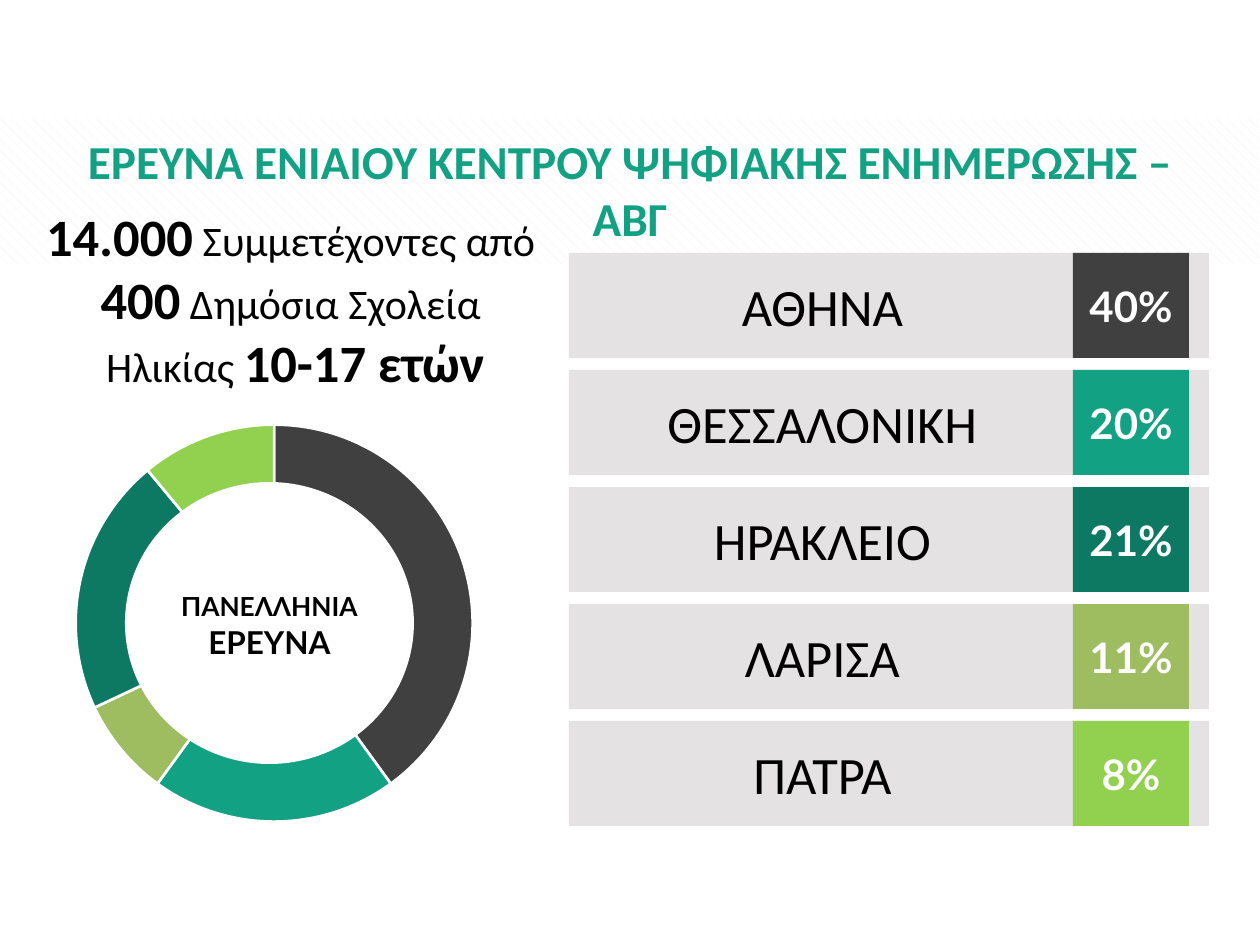
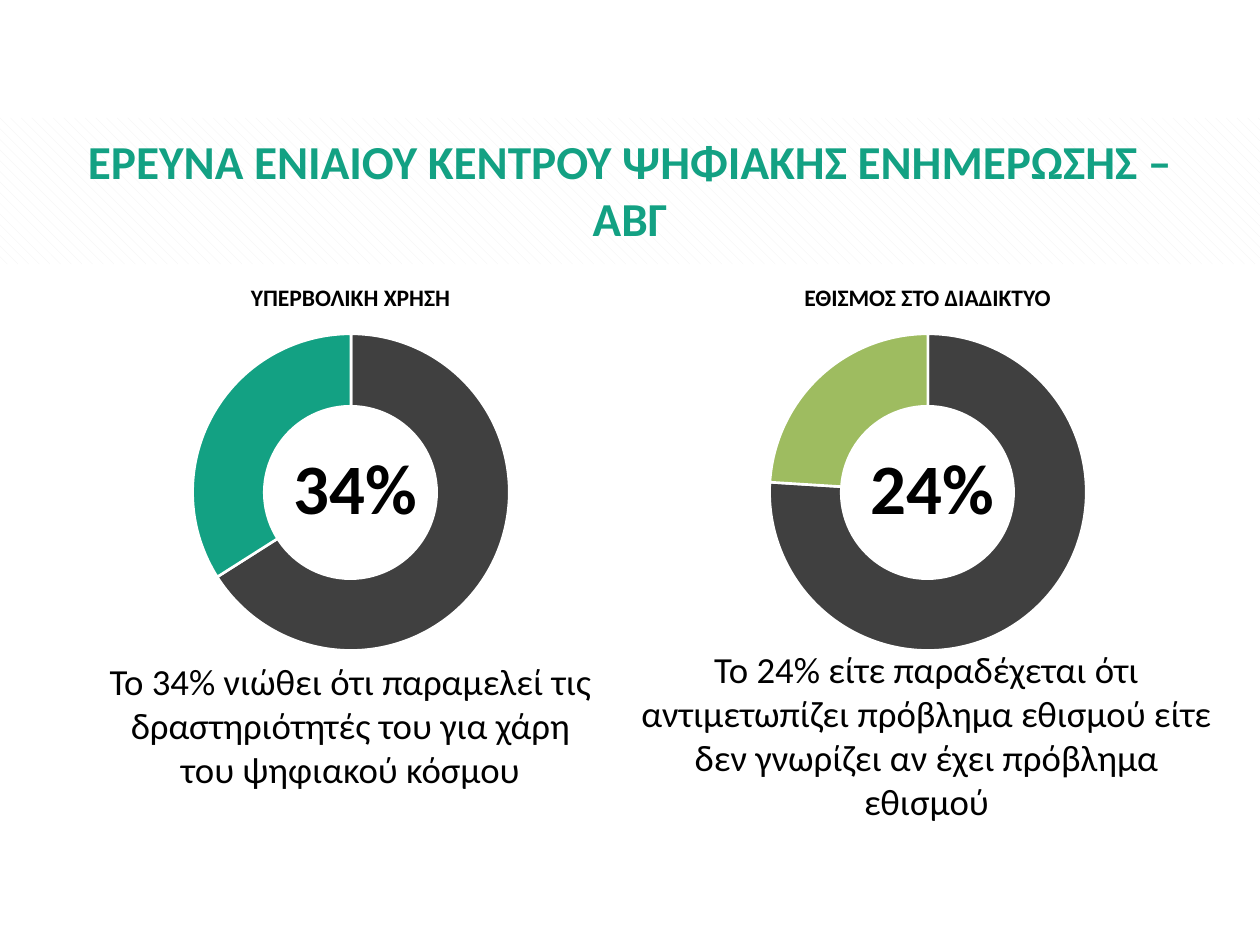
from pptx import Presentation
from pptx.chart.data import CategoryChartData
from pptx.dml.color import RGBColor
from pptx.enum.chart import XL_CHART_TYPE as ChartType
from pptx.enum.dml import MSO_PATTERN as Pattern
from pptx.enum.shapes import MSO_SHAPE as Shape
from pptx.enum.text import MSO_ANCHOR as Anchor, MSO_AUTO_SIZE as AutoSize, PP_ALIGN as Align
from pptx.oxml import parse_xml
from pptx.oxml.ns import nsdecls
from pptx.util import Emu, Pt

PX = 7257.6  # EMU per px, 126 px to the inch
COLORS = {
    "white": "FFFFFF", "black": "000000", "hatch": "F2F2F2", "row": "E4E2E2",
    "dark": "404040", "teal": "13A183", "pine": "0E7962",
    "olive": "9EBC60", "lime": "92D050",
}
TITLE = "ΕΡΕΥΝΑ ΕΝΙΑΙΟΥ ΚΕΝΤΡΟΥ ΨΗΦΙΑΚΗΣ ΕΝΗΜΕΡΩΣΗΣ – ΑΒΓ"
CITIES = [("ΑΘΗΝΑ", "40%", "dark"), ("ΘΕΣΣΑΛΟΝΙΚΗ", "20%", "teal"),
          ("ΗΡΑΚΛΕΙΟ", "21%", "pine"), ("ΛΑΡΙΣΑ", "11%", "olive"),
          ("ΠΑΤΡΑ", "8%", "lime")]


def rgb(name):
    return RGBColor.from_string(COLORS[name])


def emu(*lengths):
    return [Emu(round(length * PX)) for length in lengths]


def write(frame, paragraphs, font="Calibri", color="black", align=Align.CENTER):
    """Fill a text frame; each run is (text, size, bold)."""
    frame.word_wrap = True
    for i, runs in enumerate(paragraphs):
        paragraph = frame.paragraphs[0] if i == 0 else frame.add_paragraph()
        paragraph.alignment = align
        for text, size, bold in runs:
            run = paragraph.add_run()
            run.text = text
            run.font.name, run.font.size, run.font.bold = font, Pt(size), bold
            run.font.color.rgb = rgb(color)


def add_text(slide, box, paragraphs, anchor=Anchor.TOP, inset=False, **style):
    frame = slide.shapes.add_textbox(*emu(*box)).text_frame
    if not inset:
        frame.margin_left = frame.margin_right = frame.margin_top = frame.margin_bottom = 0
    frame.vertical_anchor = anchor
    write(frame, paragraphs, **style)
    frame.auto_size = AutoSize.SHAPE_TO_FIT_TEXT


def add_block(slide, kind, box, fill):
    block = slide.shapes.add_shape(kind, *emu(*box))
    block.shadow.inherit = False
    block.line.fill.background()
    block.fill.solid()
    block.fill.fore_color.rgb = rgb(fill)
    block.text_frame.vertical_anchor = Anchor.MIDDLE
    return block


def add_pie(slide, box, diameter, slices):
    """Pie of (value, colour) slices, centred in its box."""
    data = CategoryChartData()
    data.categories = [str(i + 1) for i in range(len(slices))]
    data.add_series("Series 1", [value for value, _ in slices])
    chart = slide.shapes.add_chart(ChartType.PIE, *emu(*box), data).chart
    chart.has_legend = chart.has_title = False
    chart.font.name, chart.font.size = "Calibri", Pt(10)
    chart.font.color.rgb = rgb("black")
    plot = chart.plots[0]
    plot.vary_by_categories = True
    for i, (_, color) in enumerate(slices):
        style = plot.series[0].points[i].format
        style.fill.solid()
        style.fill.fore_color.rgb = rgb(color)
        style.line.color.rgb = rgb("white")
        style.line.width = Pt(1.5)
    # Fixed plot area, so that the pie has the given diameter
    w, h = diameter / box[2], diameter / box[3]
    layout = parse_xml(
        f'<c:layout {nsdecls("c")}><c:manualLayout><c:layoutTarget val="inner"/>'
        '<c:xMode val="edge"/><c:yMode val="edge"/>'
        f'<c:x val="{(1 - w) / 2:.3f}"/><c:y val="{(1 - h) / 2:.3f}"/>'
        f'<c:w val="{w:.3f}"/><c:h val="{h:.3f}"/></c:manualLayout></c:layout>')
    area = chart._chartSpace.chart.plotArea
    for old in area.findall(layout.tag):
        area.remove(old)
    area.insert(0, layout)


def add_base(prs):
    """Blank slide with the hatched title band."""
    slide = prs.slides.add_slide(prs.slide_layouts[6])
    band = add_block(slide, Shape.RECTANGLE, (0, 118, 1260, 146), "white")
    band.fill.patterned()
    band.fill.pattern = Pattern.DASHED_DOWNWARD_DIAGONAL
    band.fill.fore_color.rgb = rgb("hatch")
    band.fill.back_color.rgb = rgb("white")
    return slide


def add_title(slide):
    add_text(slide, (73, 132, 1114, 57), [[(TITLE, 27, True)]], color="teal")


def add_city_row(slide, x, y, city, share, color):
    add_block(slide, Shape.RECTANGLE, (x, y, 640, 105), "row")
    tile = add_block(slide, Shape.RECTANGLE, (x + 504, y, 116, 105), color)
    write(tile.text_frame, [[(share, 24, True)]], font="Lato", color="white")
    add_text(slide, (x + 11, y + 21, 485, 63), [[(city, 30, False)]], Anchor.MIDDLE)


def build_survey(prs):
    slide = add_base(prs)
    # Ring of participants by city
    add_pie(slide, (45, 407, 458, 432), 397,
            [(40, "dark"), (20, "teal"), (8, "olive"), (21, "pine"), (11, "lime")])
    hole = add_block(slide, Shape.OVAL, (125, 482, 289, 282), "white")
    write(hole.text_frame, [[("ΠΑΝΕΛΛΗΝΙΑ", 15, True), (" ΕΡΕΥΝΑ", 18, True)]], font="Lato")
    # City list
    for i, city_row in enumerate(CITIES):
        add_city_row(slide, 569, 253 + 117 * i, *city_row)
    # Sample
    add_text(slide, (-4, 198, 599, 204), [
        [("14.000", 30, True), (" Συμμετέχοντες από ", 24, False)],
        [("400", 30, True), (" Δημόσια Σχολεία ", 24, False)],
        [("Ηλικίας ", 24, False), ("10-17 ετών", 30, True)],
    ], inset=True)
    add_title(slide)


def add_finding(slide, x, y, heading, percent, color, caption, caption_box):
    """Heading, ring with its percentage, and caption; caption_box is relative."""
    add_pie(slide, (x, y + 33, 528, 352), 317, [(100 - percent, "dark"), (percent, color)])
    add_block(slide, Shape.OVAL, (x + 176, y + 122, 175, 175), "white")
    dx, dy, w, h = caption_box
    add_text(slide, (x + dx, y + dy, w, h), [[(caption, 21, False)]], Anchor.MIDDLE)
    add_text(slide, (x + 21, y, 485, 29), [[(heading, 13.5, True)]])
    add_text(slide, (x + 194, y + 154, 185, 98), [[(f"{percent}%", 40.5, True)]],
             inset=True, align=Align.LEFT)


def build_findings(prs):
    slide = add_base(prs)
    add_finding(slide, 87, 283, "ΥΠΕΡΒΟΛΙΚΗ ΧΡΗΣΗ", 34, "teal",
                "To 34% νιώθει ότι παραμελεί τις δραστηριότητές του για χάρη "
                "του ψηφιακού κόσμου", (21, 375, 485, 134))
    add_finding(slide, 664, 283, "ΕΘΙΣΜΟΣ ΣΤΟ ΔΙΑΔΙΚΤΥΟ", 24, "olive",
                "Το 24% είτε παραδέχεται ότι αντιμετωπίζει πρόβλημα εθισμού είτε "
                "δεν γνωρίζει αν έχει πρόβλημα εθισμού", (-28, 363, 581, 178))
    add_title(slide)


def main():
    prs = Presentation()
    prs.slide_width, prs.slide_height = emu(1260, 945)
    build_survey(prs)
    build_findings(prs)
    prs.save("out.pptx")


if __name__ == "__main__":
    main()
